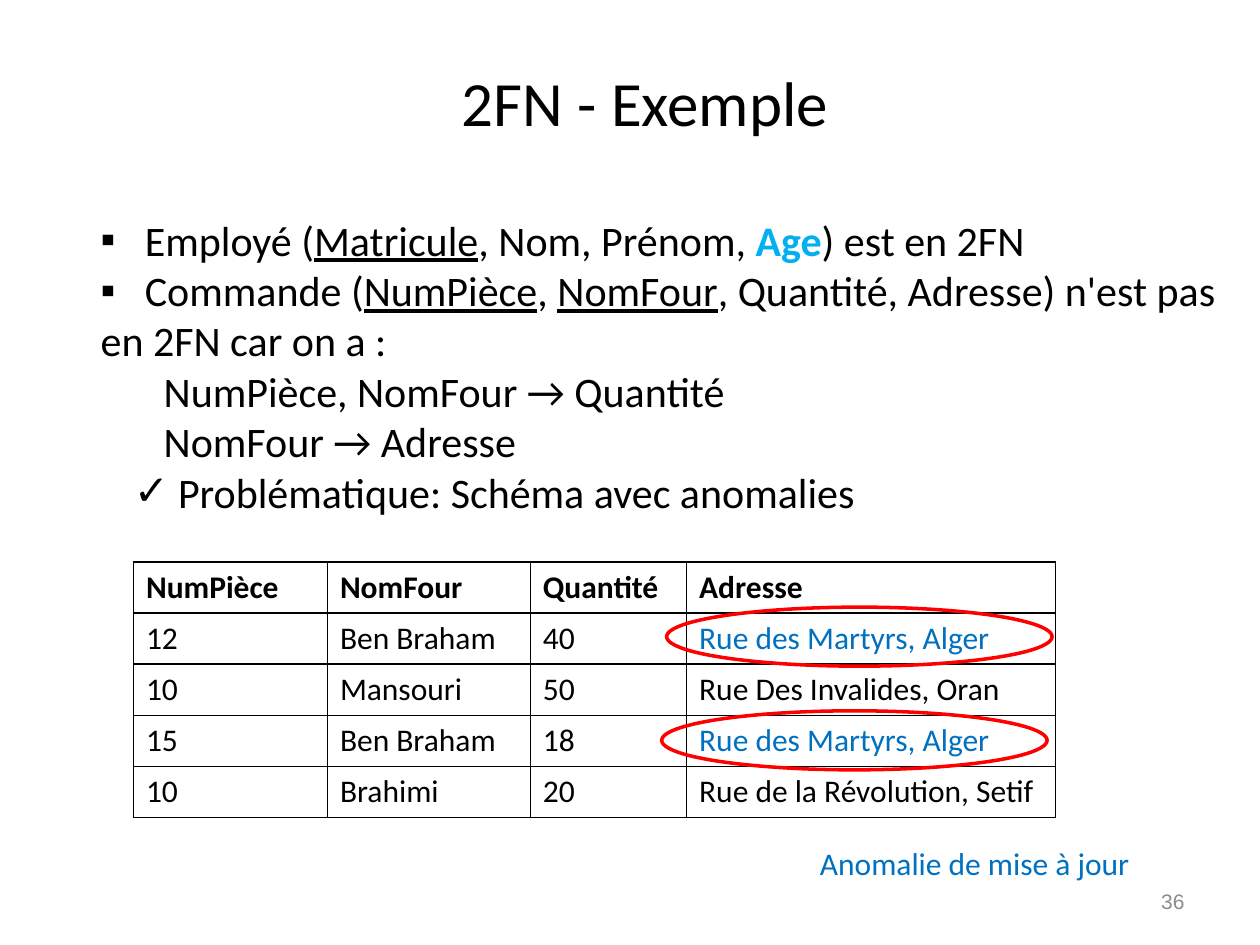
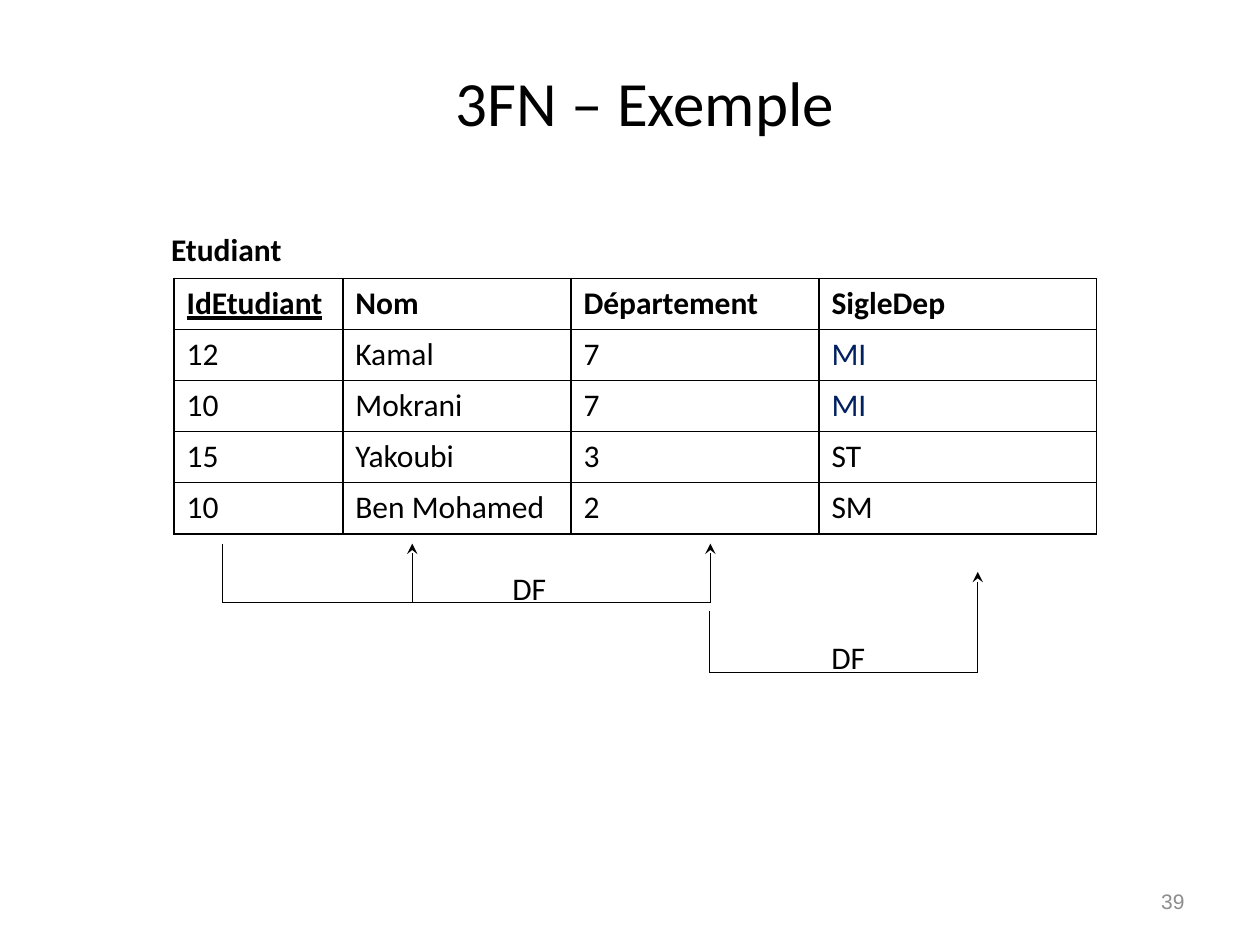
from lxml import etree
from pptx import Presentation
from pptx import util as u
from pptx.dml.color import RGBColor
from pptx.enum import shapes, text
from pptx.oxml import ns

BLACK = RGBColor(0x00, 0x00, 0x00)
GREY = RGBColor(0x8C, 0x8C, 0x8C)
RED = RGBColor(0xFF, 0x00, 0x00)
BLUE = RGBColor(0x00, 0x70, 0xC0)
SKY = RGBColor(0x00, 0xB0, 0xF0)
NAVY = RGBColor(0x00, 0x20, 0x60)

BULLET_GAP = 0.89
ROW_HEIGHT = 1.03
LABEL_HEIGHT = 1.02


def add_xml(parent, tag, **attributes):
    values = {name: str(value) for name, value in attributes.items()}
    return etree.SubElement(parent, ns.qn(tag), values)


def write(paragraph, content, size=18, color=BLACK, bold=False, underline=False,
          font="Calibri", align=None):
    run = paragraph.add_run()
    run.text = content
    run.font.size = u.Pt(size)
    run.font.name = font
    run.font.bold = bold
    run.font.underline = underline
    run.font.color.rgb = color
    if align is not None:
        paragraph.alignment = align


def format_paragraph(paragraph, left=0, indent=0, bullet=None, tab=None):
    """Set the indents (cm), the bullet character and one tab stop (cm)."""
    properties = paragraph._p.get_or_add_pPr()
    properties.set("marL", str(u.Cm(left)))
    properties.set("indent", str(u.Cm(indent)))
    if bullet:
        add_xml(properties, "a:buFont", typeface="Arial")
        add_xml(properties, "a:buChar", char=bullet)
    if tab:
        stops = add_xml(properties, "a:tabLst")
        add_xml(stops, "a:tab", pos=u.Cm(tab), algn="l")


def border_cell(cell):
    properties = cell._tc.get_or_add_tcPr()
    for side in ("a:lnL", "a:lnR", "a:lnT", "a:lnB"):
        line = add_xml(properties, side, w=u.Pt(1))
        fill = add_xml(line, "a:solidFill")
        add_xml(fill, "a:srgbClr", val=BLACK)


class Deck:
    """Holds the presentation, its style and the current slide."""

    def __init__(self):
        self.presentation = Presentation()
        self.presentation.slide_width = u.Cm(25.4)
        self.presentation.slide_height = u.Cm(19.05)
        self.slide = None

    def new_slide(self, title, number):
        self.slide = self.presentation.slides.add_slide(self.presentation.slide_layouts[6])
        middle = text.MSO_ANCHOR.MIDDLE
        frame = self.box(1.5, 0.74, 23.01, 2.59, anchor=middle)
        write(frame.paragraphs[0], title, size=36, align=text.PP_ALIGN.CENTER)
        frame = self.box(18.21, 17.65, 5.92, LABEL_HEIGHT, anchor=middle)
        write(frame.paragraphs[0], str(number), size=12, color=GREY, font="Arial",
              align=text.PP_ALIGN.RIGHT)

    def box(self, left, top, width, height, wrap=True, anchor=text.MSO_ANCHOR.TOP):
        shape = self.slide.shapes.add_textbox(u.Cm(left), u.Cm(top), u.Cm(width), u.Cm(height))
        frame = shape.text_frame
        frame.word_wrap = wrap
        frame.vertical_anchor = anchor
        return frame

    def label(self, content, left, top, width, **style):
        frame = self.box(left, top, width, LABEL_HEIGHT, wrap=False)
        write(frame.paragraphs[0], content, **style)

    def body(self, left, top, width, height, items):
        """Each item is a dict of paragraph settings and a list of (text, style) runs."""
        frame = self.box(left, top, width, height)
        for index, (settings, runs) in enumerate(items):
            paragraph = frame.add_paragraph() if index else frame.paragraphs[0]
            format_paragraph(paragraph, **settings)
            for content, style in runs:
                write(paragraph, content, size=24, **style)

    def table(self, left, top, widths, rows, styles):
        """The first row is bold; styles maps (row, column) to a text format."""
        frame = self.slide.shapes.add_table(
            len(rows), len(widths), u.Cm(left), u.Cm(top),
            u.Cm(sum(widths)), u.Cm(ROW_HEIGHT * len(rows)))
        table = frame.table
        table.first_row = table.horz_banding = False
        for column, width in zip(table.columns, widths):
            column.width = u.Cm(width)
        for row_index, values in enumerate(rows):
            table.rows[row_index].height = u.Cm(ROW_HEIGHT)
            for column_index, value in enumerate(values):
                cell = table.cell(row_index, column_index)
                border_cell(cell)
                cell.fill.background()
                write(cell.text_frame.paragraphs[0], value, bold=row_index == 0,
                      **styles.get((row_index, column_index), {}))

    def highlight(self, left, top):
        shape = self.slide.shapes.add_shape(
            shapes.MSO_SHAPE.OVAL, u.Cm(left), u.Cm(top), u.Cm(7.77), u.Cm(1.19))
        shape.shadow.inherit = False
        shape.fill.background()
        shape.line.color.rgb = RED
        shape.line.width = u.Pt(2)

    def line(self, start, end, arrow=False):
        connector = self.slide.shapes.add_connector(
            shapes.MSO_CONNECTOR.STRAIGHT, *map(u.Cm, start + end))
        connector.line.color.rgb = BLACK
        connector.line.width = u.Pt(0.75)
        if arrow:
            add_xml(connector.line._get_or_add_ln(), "a:tailEnd", type="stealth")
        add_xml(connector._element.spPr, "a:effectLst")

    def dependency(self, source, targets, base, source_top, arrow_top):
        """Draw a bracket from a source column to arrows under its target columns."""
        self.line((source, base), (source, source_top))
        self.line((source, base), (targets[-1], base))
        for target in targets:
            self.line((target, base), (target, arrow_top), arrow=True)


def build_second_form(deck):
    deck.new_slide("2FN - Exemple", 36)
    plain, key = {}, {"underline": True}
    square = {"bullet": "▪", "tab": BULLET_GAP}
    check = {"bullet": "✓", "left": 1.56, "indent": -BULLET_GAP}
    indented = {"left": 1.27}
    deck.body(1.78, 4.19, 23.39, 7.44, [
        (square, [("\tEmployé (", plain), ("Matricule", key), (", Nom, Prénom, ", plain),
                  ("Age", {"color": SKY, "bold": True}), (") est en 2FN", plain)]),
        (square, [("\tCommande (", plain), ("NumPièce", key), (", ", plain), ("NomFour", key),
                  (", Quantité, Adresse) n'est pas en 2FN car on a :", plain)]),
        (indented, [("NumPièce, NomFour → Quantité", plain)]),
        (indented, [("NomFour → Adresse", plain)]),
        (check, [("Problématique: Schéma avec anomalies", plain)]),
    ])
    orders = [
        ("NumPièce", "NomFour", "Quantité", "Adresse"),
        ("12", "Ben Braham", "40", "Rue des Martyrs, Alger"),
        ("10", "Mansouri", "50", "Rue Des Invalides, Oran"),
        ("15", "Ben Braham", "18", "Rue des Martyrs, Alger"),
        ("10", "Brahimi", "20", "Rue de la Révolution, Setif"),
    ]
    repeated = {"color": BLUE}
    deck.table(2.69, 11.33, (3.91, 4.09, 3.15, 7.44), orders,
               {(1, 3): repeated, (3, 3): repeated})
    deck.label("Anomalie de mise à jour", 16.28, 16.89, 6.83, color=BLUE)
    deck.highlight(13.44, 12.24)
    deck.highlight(13.34, 14.33)


def build_third_form(deck):
    deck.new_slide("3FN – Exemple", 39)
    students = [
        ("IdEtudiant", "Nom", "Département", "SigleDep"),
        ("12", "Kamal", "7", "MI"),
        ("10", "Mokrani", "7", "MI"),
        ("15", "Yakoubi", "3", "ST"),
        ("10", "Ben Mohamed", "2", "SM"),
    ]
    repeated = {"color": NAVY}
    deck.table(3.51, 5.61, (3.4, 4.6, 5, 5.59), students,
               {(0, 0): {"underline": True}, (1, 3): repeated, (2, 3): repeated})
    deck.label("Etudiant", 3.2, 4.52, 2.74, bold=True)
    deck.dependency(4.48, (8.31, 14.32), base=12.15, source_top=10.96, arrow_top=10.96)
    deck.label("DF", 10.08, 11.35, 1.22)
    deck.dependency(14.3, (19.71,), base=13.55, source_top=12.32, arrow_top=11.53)
    deck.label("DF", 16.51, 12.73, 1.22)


def main():
    deck = Deck()
    build_second_form(deck)
    build_third_form(deck)
    deck.presentation.save("out.pptx")


if __name__ == "__main__":
    main()
